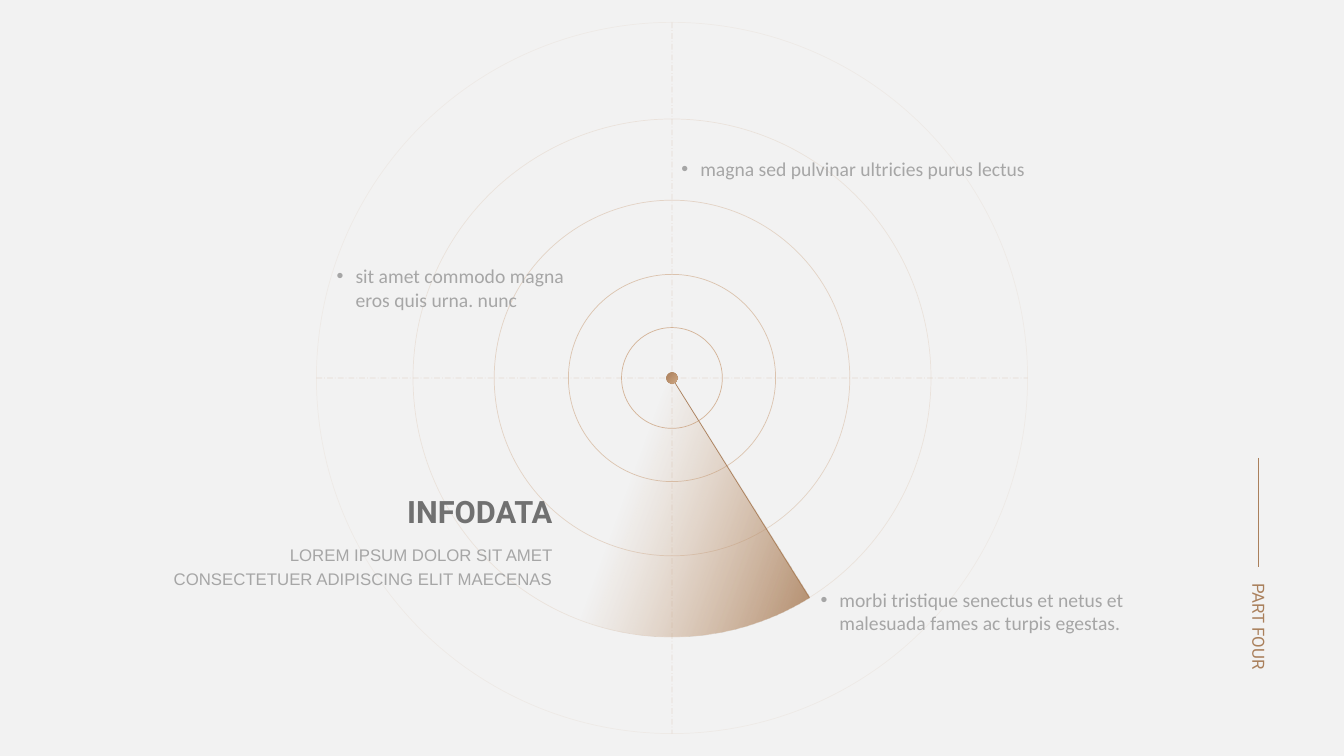
from dataclasses import dataclass
from math import cos, radians, sin

from lxml.etree import SubElement
from pptx import Presentation
from pptx.dml.color import RGBColor as RGB
from pptx.enum.dml import MSO_LINE as Dash
from pptx.enum.shapes import MSO_CONNECTOR as Conn, MSO_SHAPE as Kind
from pptx.enum.text import MSO_ANCHOR as Anchor, MSO_AUTO_SIZE as Fit, PP_ALIGN as Align
from pptx.oxml.ns import qn
from pptx.util import Pt


@dataclass(frozen=True)
class Theme:
    back: str = "F2F2F2"
    dark: str = "AA805C"
    light: str = "CDA582"
    head: str = "717171"
    text: str = "A6A6A6"
    thin: float = 0.5
    big: int = 22
    mid: int = 14
    small: int = 12


class Deck:
    def __init__(self, theme):
        self.theme = theme
        self.file = Presentation()
        self.file.slide_width, self.file.slide_height = Pt(960), Pt(540)
        self.slide = self.file.slides.add_slide(self.file.slide_layouts[4])
        self.shapes = self.slide.shapes
        fill = self.slide.background.fill
        fill.solid()
        fill.fore_color.rgb = RGB.from_string(theme.back)

    def fade(self, node, alpha):
        for color in node.iter(qn("a:srgbClr")):
            SubElement(color, qn("a:alpha")).set("val", str(alpha * 1000))

    def blend(self, fill, angle, *stops):
        fill.gradient()
        fill.gradient_angle = -angle % 360
        for stop, (pos, color) in zip(fill.gradient_stops, stops):
            stop.position = pos
            stop.color.rgb = RGB.from_string(color)

    def stroke(self, line, color, alpha=100):
        line.width = Pt(self.theme.thin)
        line.color.rgb = RGB.from_string(color)
        if alpha < 100:
            self.fade(line._ln, alpha)

    def line(self, x1, y1, x2, y2, color, alpha=100, dash=None):
        item = self.shapes.add_connector(Conn.STRAIGHT, Pt(x1), Pt(y1), Pt(x2), Pt(y2))
        self.stroke(item.line, color, alpha)
        if dash:
            item.line.dash_style = dash
        SubElement(item._element.spPr, qn("a:effectLst"))

    def disc(self, x, y, r):
        item = self.shapes.add_shape(Kind.OVAL, Pt(x - r), Pt(y - r), Pt(2 * r), Pt(2 * r))
        item.shadow.inherit = False
        return item

    def ring(self, x, y, r, alpha):
        item = self.disc(x, y, r)
        item.fill.background()
        self.stroke(item.line, self.theme.light, alpha)

    def dot(self, x, y, r):
        item = self.disc(x, y, r)
        item.line.fill.background()
        self.blend(item.fill, 45, (0, self.theme.dark), (1, self.theme.light))

    def beam(self, x, y, r, half):
        arc = [(Pt(x + r * sin(radians(a))), Pt(y + r * cos(radians(a))))
               for a in range(half, -half - 1, -1)]
        outline = self.shapes.build_freeform(Pt(x), Pt(y), scale=1.0)
        outline.add_line_segments(arc, close=True)
        item = outline.convert_to_shape()
        item.shadow.inherit = False
        item.line.fill.background()
        self.blend(item.fill, 20, (0.36, self.theme.light), (1, self.theme.dark))
        for stop, alpha in zip(item._element.spPr.iter(qn("a:gs")), (0, 90)):
            self.fade(stop, alpha)

    def put(self, box, place, text, font, size, color=None, bold=False,
            align=Align.LEFT, space=1.0, bullet=False):
        self.shapes._spTree.append(box._element)
        box.left, box.top, box.width, box.height = map(Pt, place)
        frame = box.text_frame
        frame.text = text
        frame.word_wrap = True
        frame.auto_size = Fit.SHAPE_TO_FIT_TEXT
        frame.vertical_anchor = Anchor.TOP
        para = frame.paragraphs[0]
        para.alignment, para.line_spacing, para.space_before = align, space, Pt(0)
        # Bullet and indent
        props = para._p.get_or_add_pPr()
        step = Pt(13.5) if bullet else 0
        props.set("marL", str(step))
        props.set("indent", str(-step))
        if bullet:
            SubElement(props, qn("a:buFont")).set("typeface", "Arial")
            SubElement(props, qn("a:buChar")).set("char", "•")
        else:
            SubElement(props, qn("a:buNone"))
        # Type
        para.font.name, para.font.size, para.font.bold = font, Pt(size), bold
        if color:
            para.font.color.rgb = RGB.from_string(color)
        return para

    def label(self, place, text):
        box = self.shapes.add_textbox(0, 0, 0, 0)
        box.rotation = 90
        para = self.put(box, place, text, "Roboto", self.theme.small)
        self.blend(para.font.fill, 90, (0, self.theme.dark), (1, self.theme.light))

    def title(self, place, text):
        self.put(self.shapes.title, place, text, "Roboto", self.theme.big,
                 self.theme.head, bold=True, align=Align.RIGHT)

    def lead(self, slot, place, text):
        self.put(self.slide.placeholders[slot], place, text, "Arial", self.theme.small,
                 self.theme.text, align=Align.RIGHT, space=1.2)

    def point(self, slot, place, text):
        self.put(self.slide.placeholders[slot], place, text, "Calibri", self.theme.mid,
                 self.theme.text, bullet=True)


def main():
    theme = Theme()
    deck = Deck(theme)
    x, y = 480, 270
    rings = ((36, 80), (74, 60), (127, 40), (185, 20), (254, 10))
    reach, sweep, half = rings[-1][0], rings[-2][0], 32

    # Section mark
    deck.line(899, 327, 899, 405, theme.dark)
    deck.label((854.6, 443.5, 89.3, 21.6), "PART FOUR")

    # Radar axes and rings
    for dx, dy in ((reach, 0), (0, reach)):
        deck.line(x - dx, y - dy, x + dx, y + dy, theme.light, 30, Dash.LONG_DASH_DOT)
    for r, alpha in rings:
        deck.ring(x, y, r, alpha)

    # Radar beam
    deck.beam(x, y, sweep, half)
    deck.line(x, y, x + sweep * sin(radians(half)), y + sweep * cos(radians(half)), theme.dark)
    deck.dot(x, y, 4)

    # Heading
    deck.title((257, 348.5, 144.8, 33.8), "INFODATA")
    deck.lead(1, (111.6, 382.3, 290.2, 40.3),
              "LOREM IPSUM DOLOR SIT AMET CONSECTETUER ADIPISCING ELIT MAECENAS")

    # Points around the radar
    points = (
        ((578.9, 416.2, 244, 41),
         "morbi tristique senectus et netus et malesuada fames ac turpis egestas."),
        ((479.5, 108.7, 346.3, 24.5), "magna sed pulvinar ultricies purus lectus"),
        ((233.3, 185, 177.8, 41), "sit amet commodo magna eros quis urna. nunc"),
    )
    for slot, (place, text) in enumerate(points, 2):
        deck.point(slot, place, text)

    deck.file.save("out.pptx")


if __name__ == "__main__":
    main()
